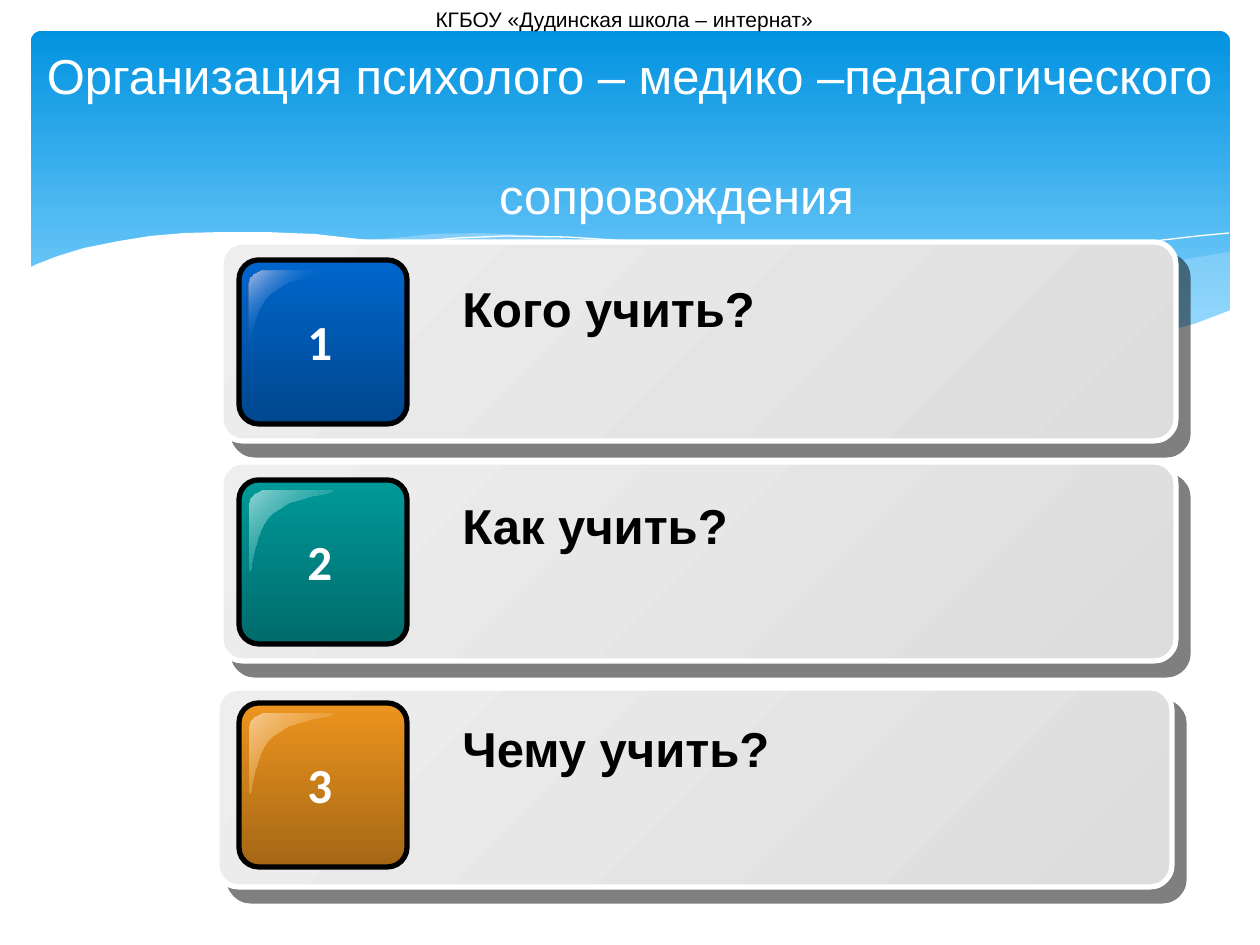
from lxml import etree
from pptx import Presentation
from pptx.dml.color import RGBColor
from pptx.enum import shapes as kinds, text as txt
from pptx.oxml.ns import qn
from pptx.util import Emu, Pt

PX = 914400 / 126
THEME = {
    "white": "FFFFFF", "black": "000000", "wave": "C6E7FC",
    "banner": ("0293E0", "83D3FE"), "card": ("EEEEEE", "DDDDDD"),
    "font": "Arial", "digit": "Calibri", "small": 12, "big": 28,
}

deck = Presentation()
deck.slide_width, deck.slide_height = Emu(round(1260 * PX)), Emu(round(945 * PX))
page = deck.slides.add_slide(deck.slide_layouts[6])
parts = page.shapes


def paint(shape, fill=None, angle=270, end=1, line=None, weight=0, alpha=None):
    """Fill with one colour or a pair; alpha (percent) fades the last colour."""
    shape.shadow.inherit = False
    if fill is None:
        shape.fill.background()
    elif isinstance(fill, tuple):
        shape.fill.gradient()
        shape.fill.gradient_angle = angle
        for stop, tint in zip(shape.fill.gradient_stops, fill):
            stop.color.rgb = RGBColor.from_string(tint)
        stop.position = end
    else:
        shape.fill.solid()
        shape.fill.fore_color.rgb = RGBColor.from_string(fill)
    if alpha is not None:
        tint = shape._element.spPr.xpath("./*[self::a:solidFill or self::a:gradFill]//a:srgbClr")[-1]
        etree.SubElement(tint, qn("a:alpha")).set("val", str(alpha * 1000))
    if line is None:
        shape.line.fill.background()
    else:
        shape.line.color.rgb = RGBColor.from_string(line)
        shape.line.width = Pt(weight)


def write(lines, x, y, w, h, size=THEME["big"], font=THEME["font"], tint=THEME["black"],
          bold=False, align=txt.PP_ALIGN.LEFT, wrap=True, indent=0):
    box = parts.add_textbox(*(Emu(round(v * PX)) for v in (x, y, w, h)))
    frame = box.text_frame
    frame.word_wrap = wrap
    for i, line in enumerate(lines):
        para = frame.add_paragraph() if i else frame.paragraphs[0]
        para.alignment = align
        if indent:
            para._p.get_or_add_pPr().set("marL", str(round(indent * PX)))
        run = para.add_run()
        run.text = line
        run.font.size, run.font.name, run.font.bold = Pt(size), font, bold
        run.font.color.rgb = RGBColor.from_string(tint)
    return frame


# Banner
banner = parts.add_shape(kinds.MSO_SHAPE.ROUNDED_RECTANGLE,
                         *(Emu(round(v * PX)) for v in (31, 31, 1199, 340)))
banner.adjustments[0] = 0.03
paint(banner, THEME["banner"], end=0.9)

# Waves: fill, alpha, points; those without a fill are open white lines
waves = [
    (THEME["wave"], 29, [
        (1229, 252), (1176, 261), (1123, 273), (1085, 281), (1014, 299), (949, 312),
        (890, 324), (833, 334), (906, 344), (970, 349), (1038, 350), (1100, 347),
        (1160, 338), (1196, 324), (1230, 311), (1230, 252)]),
    (THEME["wave"], 40, [
        (1125, 344), (1055, 334), (976, 320), (890, 302), (793, 280), (736, 266),
        (682, 256), (632, 247), (586, 241), (529, 235), (479, 233), (433, 234),
        (394, 238), (360, 241), (431, 251), (509, 266), (566, 280), (668, 302),
        (757, 321), (838, 335), (911, 344), (987, 349), (1056, 350)]),
    (None, None, [
        (389, 246), (414, 242), (457, 238), (505, 236), (567, 237), (643, 242),
        (733, 252), (837, 268), (958, 295), (1047, 316), (1143, 343)]),
    (None, None, [
        (772, 324), (823, 310), (907, 289), (1016, 265), (1091, 251), (1146, 242),
        (1198, 236), (1229, 233)]),
    (THEME["white"], None, [
        (1231, 310), (1197, 323), (1159, 334), (1103, 344), (1037, 349), (959, 346),
        (867, 338), (760, 320), (634, 294), (563, 277), (493, 261), (428, 248),
        (368, 240), (315, 234), (266, 232), (223, 232), (184, 233), (150, 236),
        (119, 241), (84, 248), (58, 256), (37, 264), (29, 268), (29, 415), (1231, 415)]),
]
for fill, alpha, points in waves:
    pen = parts.build_freeform(*points[0], scale=PX)
    pen.add_line_segments(points[1:], close=fill is not None)
    paint(pen.convert_to_shape(), fill, alpha=alpha, line=None if fill else THEME["white"])

# Headings
mid = txt.PP_ALIGN.CENTER
write(["КГБОУ «Дудинская школа – интернат»"], 29, 0, 1191, 38, size=THEME["small"], align=mid)
title = write(["Организация психолого – медико –педагогического", "сопровождения"],
              29, 39, 1201, 131, tint=THEME["white"], align=mid)
last = title.paragraphs[1]
last.space_before = Pt(35)
last._p.get_or_add_pPr().set("marL", str(round(94 * PX)))

# Gloss outline: cubic curves sampled into short segments
curves = [
    [(18, 0), (8, 0), (0, 6), (0, 15)],
    [(0, 79), (4, 80), (2, 42), (23, 23)],
    [(23, 23), (44, 5), (84, 4), (83, 0)],
]
gloss = []
for a, b, c, d in curves:
    for step in range(13):
        t = step / 12
        gloss.append(tuple((1 - t) ** 3 * a[k] + 3 * t * (1 - t) ** 2 * b[k]
                           + 3 * t * t * (1 - t) * c[k] + t ** 3 * d[k] for k in (0, 1)))

# Cards: text, card left and top, tile top, text top, tile colours, gloss colour, fade end
cards = [
    ("Кого учить?", 221, 242, 260, 272, ("0066CC", "00478E"), "B5C0E5", 0.5),
    ("Как учить?", 221, 462, 480, 489, ("009999", "006B6B"), "93D4D4", 1),
    ("Чему учить?", 217, 688, 703, 712, ("EC941E", "A56715"), "F6CB92", 1),
]
for num, (label, left, top, tile, base, tints, shine, end) in enumerate(cards, 1):
    plates = [
        ((left, top, 955, 199), 0.11, THEME["card"], 315, THEME["white"]),
        ((239, tile, 168, 164), 0.12, tints, 270, THEME["black"]),
    ]
    for place, curve, fill, angle, edge in plates:
        plate = parts.add_shape(kinds.MSO_SHAPE.ROUNDED_RECTANGLE,
                                *(Emu(round(v * PX)) for v in place))
        plate.adjustments[0] = curve
        paint(plate, fill, angle, line=edge, weight=3)
        if edge == THEME["white"]:
            effects = plate._element.spPr.find(qn("a:effectLst"))
            shade = etree.SubElement(effects, qn("a:outerShdw"), blurRad="0", dist=str(Pt(10.6)),
                                     dir=str(49 * 60000), algn="ctr", rotWithShape="0")
            tint = etree.SubElement(shade, qn("a:srgbClr"), val=THEME["black"])
            etree.SubElement(tint, qn("a:alpha"), val="50000")

    spots = [(249 + x, tile + 11 + y) for x, y in gloss]
    pen = parts.build_freeform(*spots[0], scale=PX)
    pen.add_line_segments(spots[1:], close=True)
    paint(pen.convert_to_shape(), (shine, tints[0]), 315, end=end, alpha=0)

    write([str(num)], 295, tile + 45, 53, 72, font=THEME["digit"],
          tint=THEME["white"], bold=True, wrap=False)
    write([label], 431, base, 660, 120, bold=True, indent=19)

deck.save("out.pptx")
